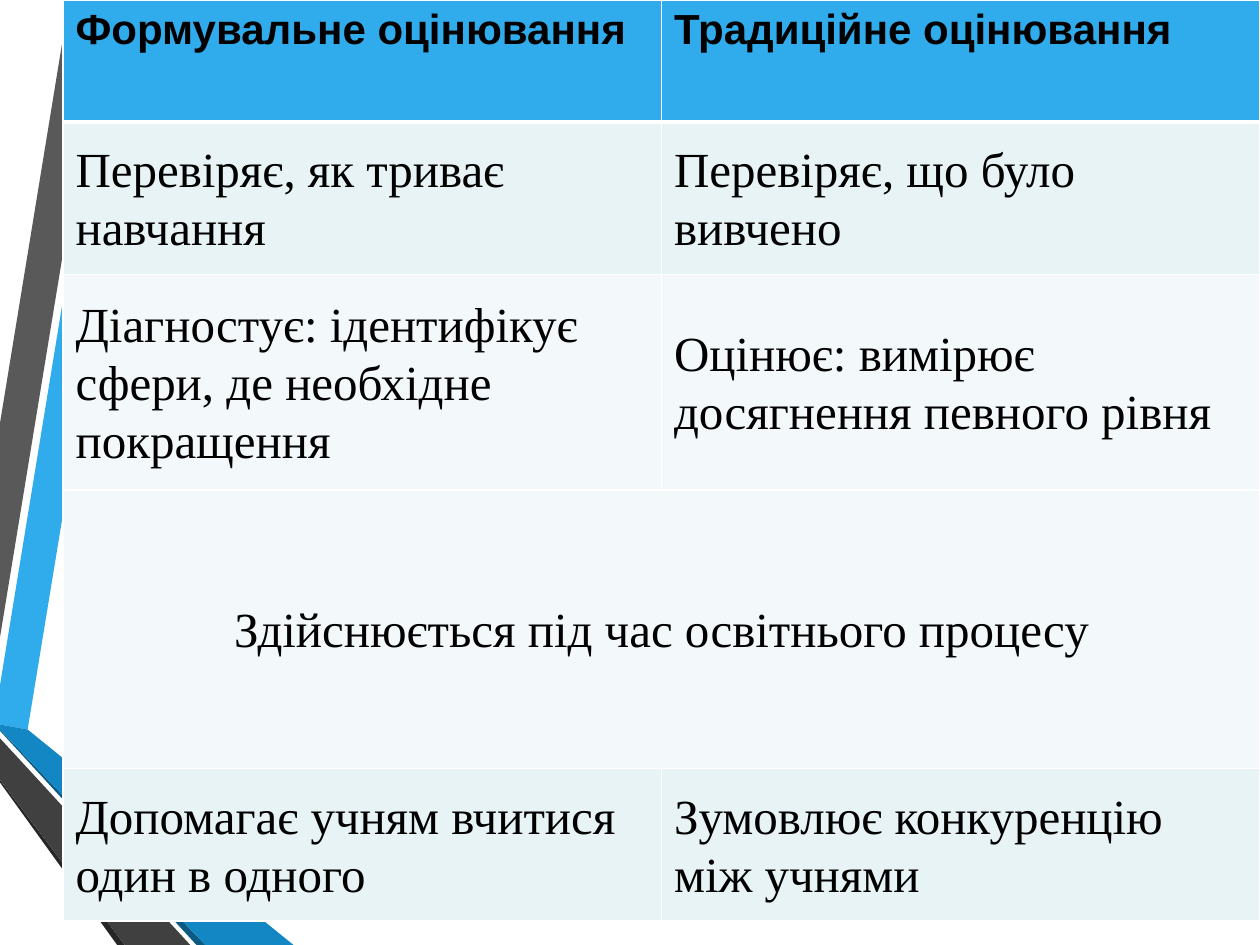
from lxml.etree import SubElement
from pptx import Presentation
from pptx.dml.color import RGBColor
from pptx.enum.text import MSO_ANCHOR, PP_ALIGN
from pptx.oxml.ns import qn
from pptx.util import Inches, Pt

BANDS = [
    ("30ACEC", [(0, 5.44), (0, 5.75), (0.22, 5.79), (1.17, 0), (0.89, 0)]),
    ("595959", [(0.83, 0), (0.55, 0), (0, 3.36), (0, 5.06)]),
    ("262626", [(0, 6.19), (0, 6.21), (0.93, 7.5), (0.99, 7.5)]),
    ("0C5A82", [(0, 5.79), (0, 5.8), (1.56, 7.5), (1.63, 7.5)]),
    ("1287C3", [(0, 5.79), (1.63, 7.5), (2.33, 7.5), (0.22, 5.79), (0, 5.75)]),
    ("404040", [(0, 6.19), (0.99, 7.5), (1.51, 7.5), (0, 5.86)]),
]
HEAD = ["Формувальне оцінювання", "Традиційне оцінювання"]
BODY = [
    (1.21, "E7F3F4", ["Перевіряє, як триває навчання", "Перевіряє, що було вивчено"]),
    (1.71, "F3F9FA", ["Діагностує: ідентифікує сфери, де необхідне покращення",
                      "Оцінює: вимірює досягнення певного рівня"]),
    (2.21, "F3F9FA", ["Здійснюється під час освітнього процесу"]),
    (1.21, "E7F3F4", ["Допомагає учням вчитися один в одного",
                      "Зумовлює конкуренцію між учнями"]),
]


def color(code):
    """Turn a hex string into a colour."""
    return RGBColor.from_string(code)


def paint(fill, code):
    """Give a fill one solid colour."""
    fill.solid()
    fill.fore_color.rgb = color(code)


def add_bands(slide, left, top):
    """Draw the folded ribbons from the given corner."""
    for code, points in BANDS:
        spots = [(Inches(x), Inches(y)) for x, y in points]
        pen = slide.shapes.build_freeform(*spots[0])
        pen.add_line_segments(spots[1:], close=True)
        band = pen.convert_to_shape(left, top)
        band.shadow.inherit = False
        paint(band.fill, code)
        band.line.fill.background()


def add_edges(cell, widths):
    """Draw white cell borders, given widths by side."""
    props = cell._tc.get_or_add_tcPr()
    for side, width in widths.items():
        line = SubElement(props, qn(f"a:ln{side}"), w=str(Pt(width)))
        solid = SubElement(line, qn("a:solidFill"))
        SubElement(solid, qn("a:srgbClr"), val="FFFFFF")


def style_cell(cell, row, code):
    """Set the borders, fill and margins of a cell."""
    add_edges(cell, {"L": 1, "R": 1, "T": 3 if row == 1 else 1, "B": 1 if row else 3})
    paint(cell.fill, code)
    cell.margin_left = cell.margin_right = Inches(0.1)
    cell.margin_top = cell.margin_bottom = Inches(0.1 if row else 0.05)
    cell.vertical_anchor = MSO_ANCHOR.MIDDLE if row else MSO_ANCHOR.TOP


def write(cell, text, head):
    """Put text in a cell, styled for head or body."""
    cell.text = text
    para = cell.text_frame.paragraphs[0]
    font = para.font
    font.name = "Arial" if head else "Times New Roman"
    font.size = Pt(24 if head else 28)
    font.bold = head
    font.color.rgb = color("000000" if head else "010101")
    if not head:
        para.line_spacing = 1.07
    if cell.is_merge_origin:
        para.alignment = PP_ALIGN.CENTER


def add_grid(slide, left, top, width, height):
    """Build the comparison table in the given box."""
    rows = [(0.97, "30ACEC", HEAD)] + BODY
    grid = slide.shapes.add_table(len(rows), len(HEAD), left, top, width, height).table
    for row, (tall, code, texts) in enumerate(rows):
        grid.rows[row].height = Inches(tall)
        cells = list(grid.rows[row].cells)
        for cell in cells:
            style_cell(cell, row, code)
        if len(texts) == 1:
            cells[0].merge(cells[-1])
        for cell, text in zip(cells, texts):
            write(cell, text, row == 0)


def main():
    """Build and save the slide."""
    deck = Presentation()
    deck.slide_width, deck.slide_height = Inches(10), Inches(7.5)
    slide = deck.slides.add_slide(deck.slide_layouts[6])
    add_bands(slide, Inches(0), Inches(0))
    add_grid(slide, Inches(0.5), Inches(0), Inches(9.5), Inches(7.3))
    deck.save("out.pptx")


if __name__ == "__main__":
    main()
